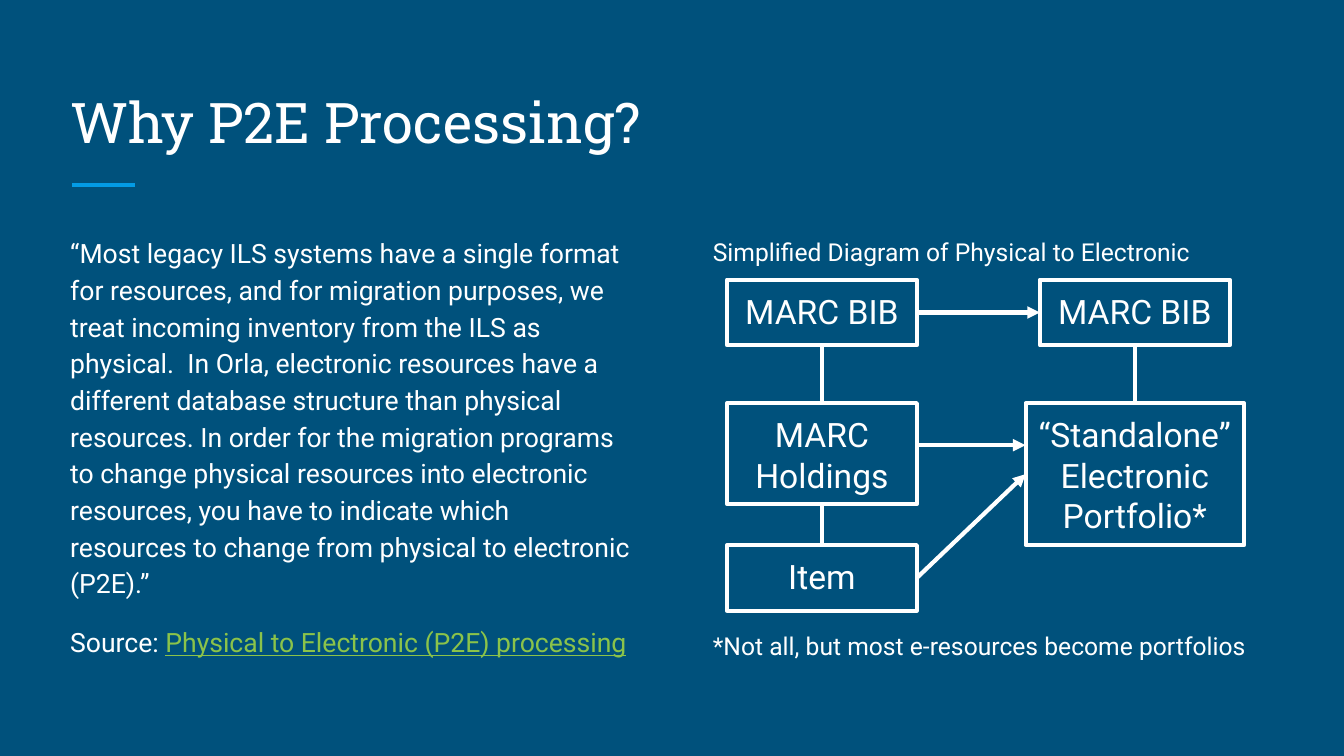
from lxml.etree import SubElement
from pptx import Presentation
from pptx.dml.color import RGBColor
from pptx.enum.shapes import MSO_CONNECTOR, MSO_SHAPE
from pptx.enum.text import MSO_ANCHOR, MSO_AUTO_SIZE, PP_ALIGN
from pptx.oxml.ns import qn
from pptx.util import Inches, Pt

COLORS = {
    "background": "00517C",
    "text": "FFFFFF",
    "accent": "039BE5",
    "reference": "8BC34A",
}
COLUMNS, ROWS = 160, 90
TOP, LEFT, BOTTOM, RIGHT = range(4)


class SlideBuilder:
    title_font = "Roboto Slab"
    body_font = "Roboto"
    line_width = Pt(3)

    def __init__(self, deck):
        self.page = deck.slides.add_slide(deck.slide_layouts[3])
        self.column = deck.slide_width / COLUMNS
        self.row = deck.slide_height / ROWS
        fill = self.page.background.fill
        fill.solid()
        fill.fore_color.rgb = self.color("background")

    def color(self, name):
        return RGBColor.from_string(COLORS[name])

    def x(self, columns):
        return round(columns * self.column)

    def y(self, rows):
        return round(rows * self.row)

    def span(self, para, text, size, font, color="text", underline=None):
        span = para.add_run()
        span.text = text
        span.font.name = font
        span.font.size = Pt(size)
        span.font.color.rgb = self.color(color)
        span.font.underline = underline

    def frame(self, shape, anchor, inset):
        frame = shape.text_frame
        frame.word_wrap = True
        frame.auto_size = MSO_AUTO_SIZE.NONE
        frame.vertical_anchor = anchor
        frame.margin_left = frame.margin_right = Inches(inset)
        frame.margin_top = frame.margin_bottom = Inches(inset)
        return frame

    def placeholder(self, index, left, top, width, height, anchor):
        holder = self.page.placeholders[index]
        holder.left, holder.top = self.x(left), self.y(top)
        holder.width, holder.height = self.x(width), self.y(height)
        return self.frame(holder, anchor, 0.13)

    def title(self, text, left, top, width, height):
        frame = self.placeholder(0, left, top, width, height, MSO_ANCHOR.BOTTOM)
        para = frame.paragraphs[0]
        para.alignment = PP_ALIGN.LEFT
        self.span(para, text, 40, self.title_font)

    def body(self, index, left, size, paragraphs):
        frame = self.placeholder(index, left, 26.1, 70, 53.9, MSO_ANCHOR.TOP)
        for number, (before, spans) in enumerate(paragraphs):
            para = frame.add_paragraph() if number else frame.paragraphs[0]
            para.alignment = PP_ALIGN.LEFT
            para.line_spacing = 1.15
            para.space_before = Pt(before)
            para.space_after = Pt(0)
            properties = para._p.get_or_add_pPr()
            properties.set("marL", "0")
            properties.set("indent", "0")
            SubElement(properties, qn("a:buNone"))
            for text, *style in spans:
                self.span(para, text, size, self.body_font, *style)

    def box(self, text, center, top, width, height):
        box = self.page.shapes.add_shape(
            MSO_SHAPE.RECTANGLE,
            self.x(center - width / 2), self.y(top), self.x(width), self.y(height),
        )
        box.shadow.inherit = False
        box.fill.background()
        box.line.color.rgb = self.color("text")
        box.line.width = self.line_width
        para = self.frame(box, MSO_ANCHOR.TOP, 0.11).paragraphs[0]
        para.alignment = PP_ALIGN.CENTER
        self.span(para, text, 24, self.body_font)
        return box

    def line(self, start=(0, 0), end=(0, 0), color="text", arrow=False):
        line = self.page.shapes.add_connector(
            MSO_CONNECTOR.STRAIGHT,
            self.x(start[0]), self.y(start[1]), self.x(end[0]), self.y(end[1]),
        )
        line.line.color.rgb = self.color(color)
        line.line.width = self.line_width
        if arrow:
            SubElement(line.line._get_or_add_ln(), qn("a:tailEnd"), type="triangle")
        SubElement(line._element.spPr, qn("a:effectLst"))
        return line

    def join(self, source, source_side, target, target_side, arrow=False):
        line = self.line(arrow=arrow)
        line.begin_connect(source, source_side)
        line.end_connect(target, target_side)


def main():
    deck = Presentation()
    deck.slide_width, deck.slide_height = Inches(13.3333), Inches(7.5)
    slide = SlideBuilder(deck)

    slide.line((8.6, 22.05), (16.1, 22.05), "accent")
    slide.title("Why P2E Processing?", 6.8, 8, 146.4, 12)

    quote = (
        "“Most legacy ILS systems have a single format for resources, and for "
        "migration purposes, we treat incoming inventory from the ILS as physical.  "
        "In Orla, electronic resources have a different database structure than "
        "physical resources. In order for the migration programs to change physical "
        "resources into electronic resources, you have to indicate which resources "
        "to change from physical to electronic (P2E).”"
    )
    reference = ("Physical to Electronic (P2E) processing", "reference", True)
    slide.body(1, 6.8, 19, [(0, [(quote,)]), (16, [("Source: ",), reference])])
    slide.body(2, 83.3, 17.6, [
        (0, [("Simplified Diagram of Physical to Electronic",)]),
        (257, [("*Not all, but most e-resources become portfolios",)]),
    ])

    physical, electronic = 97.85, 135.1
    width, height = 22.6, 7.8
    first, second, third = 33.3, 48, 64.9
    record = slide.box("MARC BIB", physical, first, width, height)
    new_record = slide.box("MARC BIB", electronic, first, width, height)
    holdings = slide.box("MARC Holdings", physical, second, width, 12)
    item = slide.box("Item", physical, third, width, height)
    portfolio = slide.box(
        "“Standalone” Electronic Portfolio*", electronic, second, 26, third - second
    )

    slide.join(record, RIGHT, new_record, LEFT, arrow=True)
    slide.join(record, BOTTOM, holdings, TOP)
    slide.join(holdings, BOTTOM, item, TOP)
    slide.join(new_record, BOTTOM, portfolio, TOP)
    slide.join(item, RIGHT, portfolio, LEFT, arrow=True)
    slide.line((physical + width / 2, 53), (electronic - 13, 53), arrow=True)

    deck.save("out.pptx")


if __name__ == "__main__":
    main()
